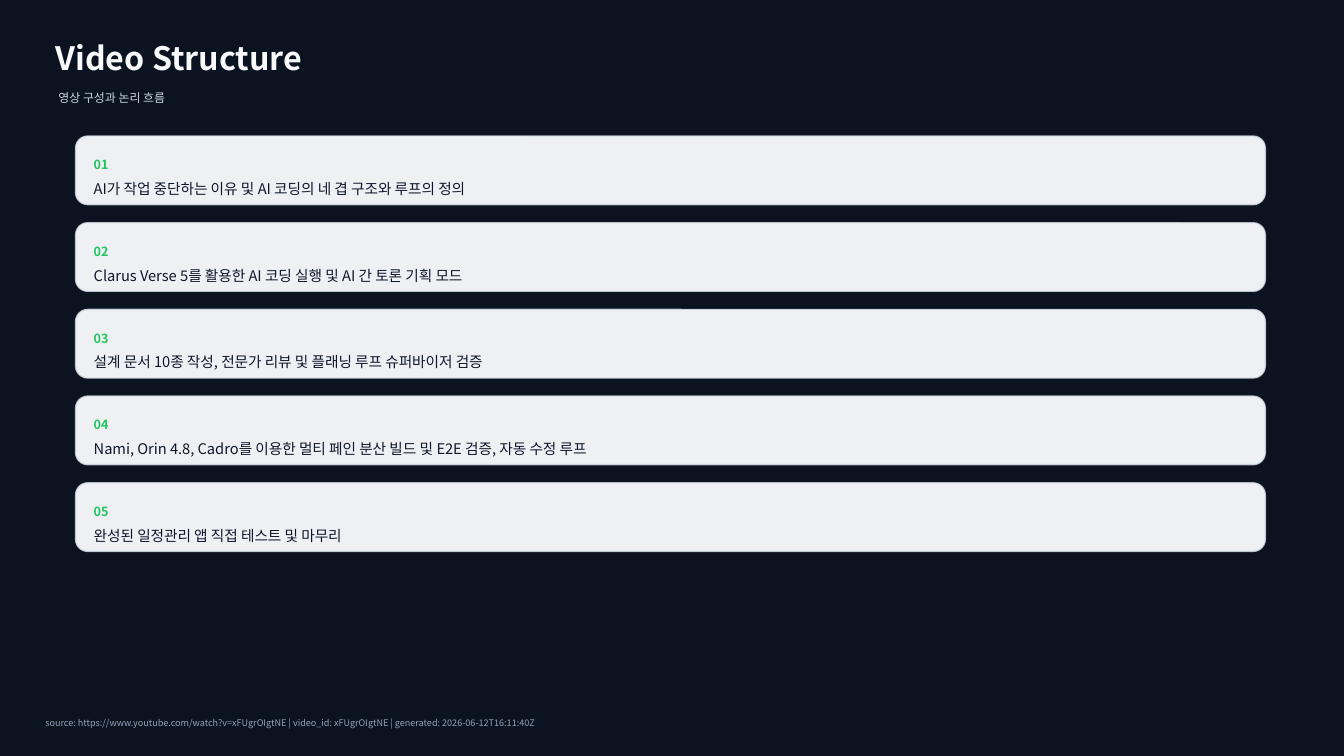
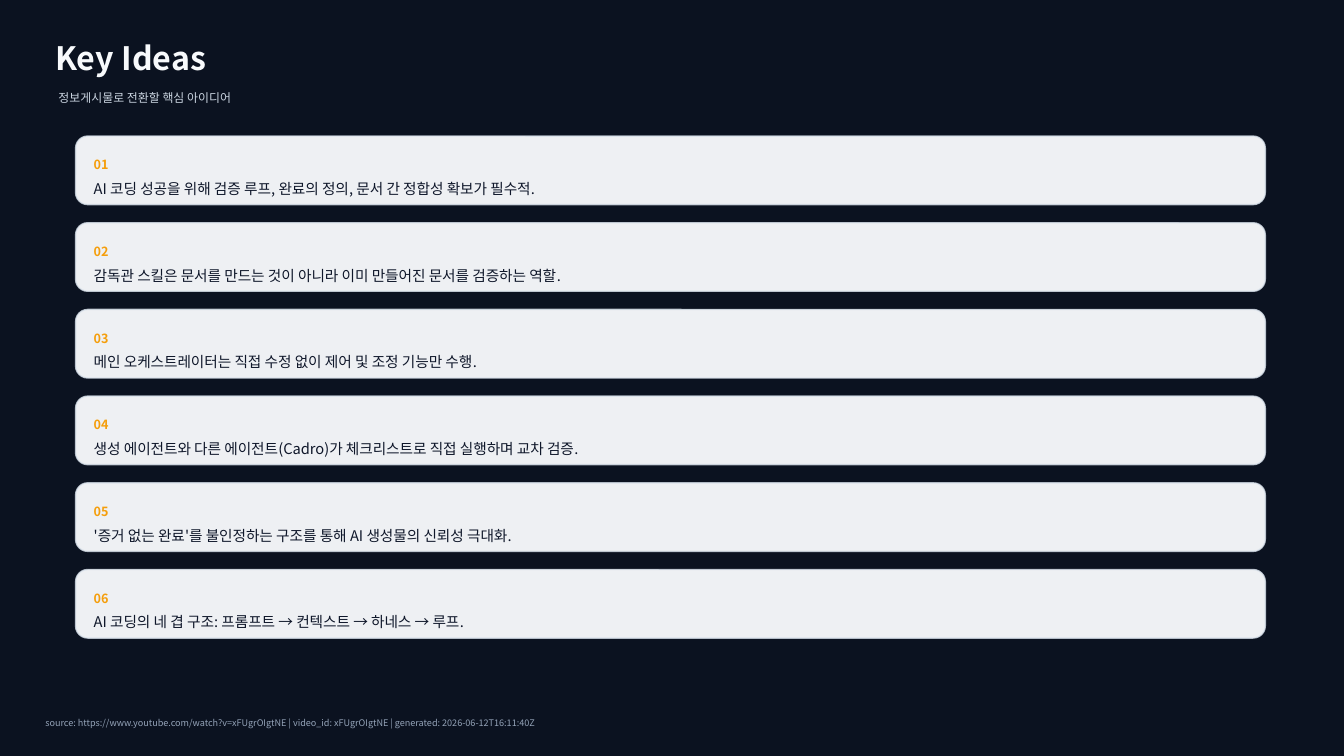
from lxml import etree
from pptx import Presentation
from pptx.dml.color import RGBColor
from pptx.enum.shapes import MSO_SHAPE
from pptx.enum.text import MSO_ANCHOR
from pptx.oxml.ns import qn
from pptx.util import Inches, Pt

ROUNDED = MSO_SHAPE.ROUNDED_RECTANGLE
MIDDLE = MSO_ANCHOR.MIDDLE

FONT = "Noto Sans CJK KR"
COLORS = {
    "background": "0B1220",
    "title": "F8FAFC",
    "subtitle": "CBD5E1",
    "card": "F8FAFC",
    "card_line": "D7E0EA",
    "body": "0F172A",
    "footer": "94A3B8",
    "green": "22C55E",
    "amber": "F59E0B",
}

SLIDE_W, SLIDE_H = 13.33, 7.5
TITLE_BOX = (0.55, 0.35, 12, 0.45)
SUBTITLE_BOX = (0.58, 0.83, 11.5, 0.28)
FOOTER_BOX = (0.45, 7.05, 12.4, 0.25)
CARD_LEFT, CARD_TOP, CARD_W, CARD_H = 0.75, 1.35, 11.8, 0.68
CARD_PITCH = 0.86
CARD_PAD = 0.18
CARD_RADIUS = 0.12

FOOTER = ("source: https://www.youtube.com/watch?v=xFUgrOIgtNE | "
          "video_id: xFUgrOIgtNE | generated: 2026-06-12T16:11:40Z")

SLIDES = [
    {
        "title": "Video Structure",
        "subtitle": "영상 구성과 논리 흐름",
        "accent": "green",
        "items": [
            "AI가 작업 중단하는 이유 및 AI 코딩의 네 겹 구조와 루프의 정의",
            "Clarus Verse 5를 활용한 AI 코딩 실행 및 AI 간 토론 기획 모드",
            "설계 문서 10종 작성, 전문가 리뷰 및 플래닝 루프 슈퍼바이저 검증",
            "Nami, Orin 4.8, Cadro를 이용한 멀티 페인 분산 빌드 및 E2E 검증, 자동 수정 루프",
            "완성된 일정관리 앱 직접 테스트 및 마무리",
        ],
    },
    {
        "title": "Key Ideas",
        "subtitle": "정보게시물로 전환할 핵심 아이디어",
        "accent": "amber",
        "items": [
            "AI 코딩 성공을 위해 검증 루프, 완료의 정의, 문서 간 정합성 확보가 필수적.",
            "감독관 스킬은 문서를 만드는 것이 아니라 이미 만들어진 문서를 검증하는 역할.",
            "메인 오케스트레이터는 직접 수정 없이 제어 및 조정 기능만 수행.",
            "생성 에이전트와 다른 에이전트(Cadro)가 체크리스트로 직접 실행하며 교차 검증.",
            "'증거 없는 완료'를 불인정하는 구조를 통해 AI 생성물의 신뢰성 극대화.",
            "AI 코딩의 네 겹 구조: 프롬프트 → 컨텍스트 → 하네스 → 루프.",
        ],
    },
]


def rgb(name):
    return RGBColor.from_string(COLORS[name])


def paint(fill, color, opacity=100):
    """Fill solidly, with opacity in percent."""
    fill.solid()
    fill.fore_color.rgb = rgb(color)
    if opacity < 100:
        srgb = fill._xPr.find(qn("a:solidFill")).find(qn("a:srgbClr"))
        etree.SubElement(srgb, qn("a:alpha")).set("val", str(opacity * 1000))


def add_text(slide, box, text, size, color, bold=False):
    frame = slide.shapes.add_textbox(*map(Inches, box)).text_frame
    frame.word_wrap = True
    frame.vertical_anchor = MIDDLE
    frame.margin_left = frame.margin_top = 0
    frame.margin_right = frame.margin_bottom = 0
    run = frame.paragraphs[0].add_run()
    run.text = text
    font = run.font
    font.name, font.size, font.bold = FONT, Pt(size), bold
    font.color.rgb = rgb(color)
    east_asian = etree.SubElement(run._r.get_or_add_rPr(), qn("a:ea"))
    east_asian.set("typeface", FONT)


def add_header(slide, title, subtitle):
    add_text(slide, TITLE_BOX, title, 23, "title", bold=True)
    add_text(slide, SUBTITLE_BOX, subtitle, 8.5, "subtitle")


def add_card(slide, box, number, text, accent):
    left, top, width, height = box
    card = slide.shapes.add_shape(ROUNDED, *map(Inches, box))
    card.shadow.inherit = False
    card.adjustments[0] = CARD_RADIUS / height
    paint(card.fill, "card", 96)
    card.line.width = Pt(1)
    paint(card.line.fill, "card_line", 80)

    text_left, text_w = left + CARD_PAD, width - 2 * CARD_PAD
    add_text(slide, (text_left, top + 0.16, text_w, 0.25),
             f"{number:02d}", 9, accent, bold=True)
    add_text(slide, (text_left, top + 0.5, text_w, 0.04), text, 10.5, "body")


def add_card_slide(prs, title, subtitle, accent, items):
    slide = prs.slides.add_slide(prs.slide_layouts[6])
    add_header(slide, title, subtitle)
    for row, item in enumerate(items):
        box = (CARD_LEFT, CARD_TOP + row * CARD_PITCH, CARD_W, CARD_H)
        add_card(slide, box, row + 1, item, accent)
    add_text(slide, FOOTER_BOX, FOOTER, 6.5, "footer")


def main():
    prs = Presentation()
    prs.slide_width, prs.slide_height = Inches(SLIDE_W), Inches(SLIDE_H)
    paint(prs.slide_master.background.fill, "background")
    for content in SLIDES:
        add_card_slide(prs, **content)
    prs.save("out.pptx")


if __name__ == "__main__":
    main()
